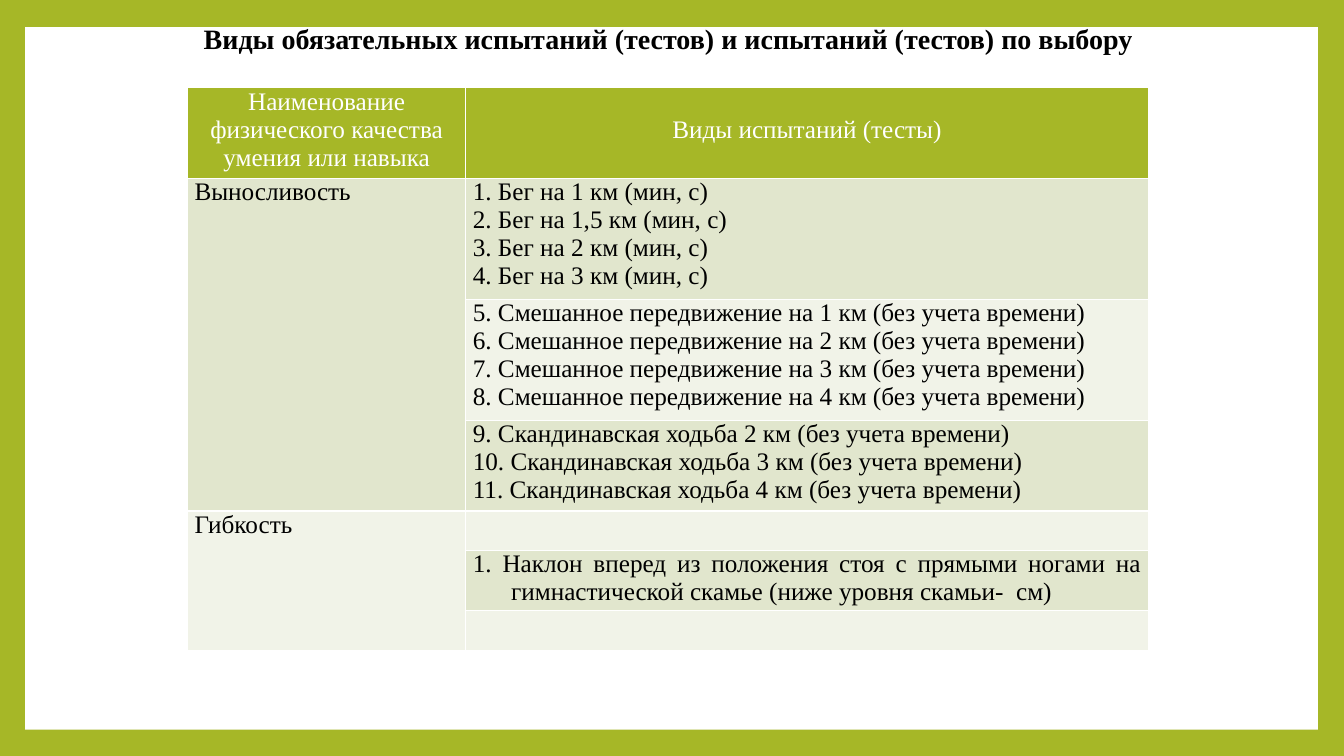
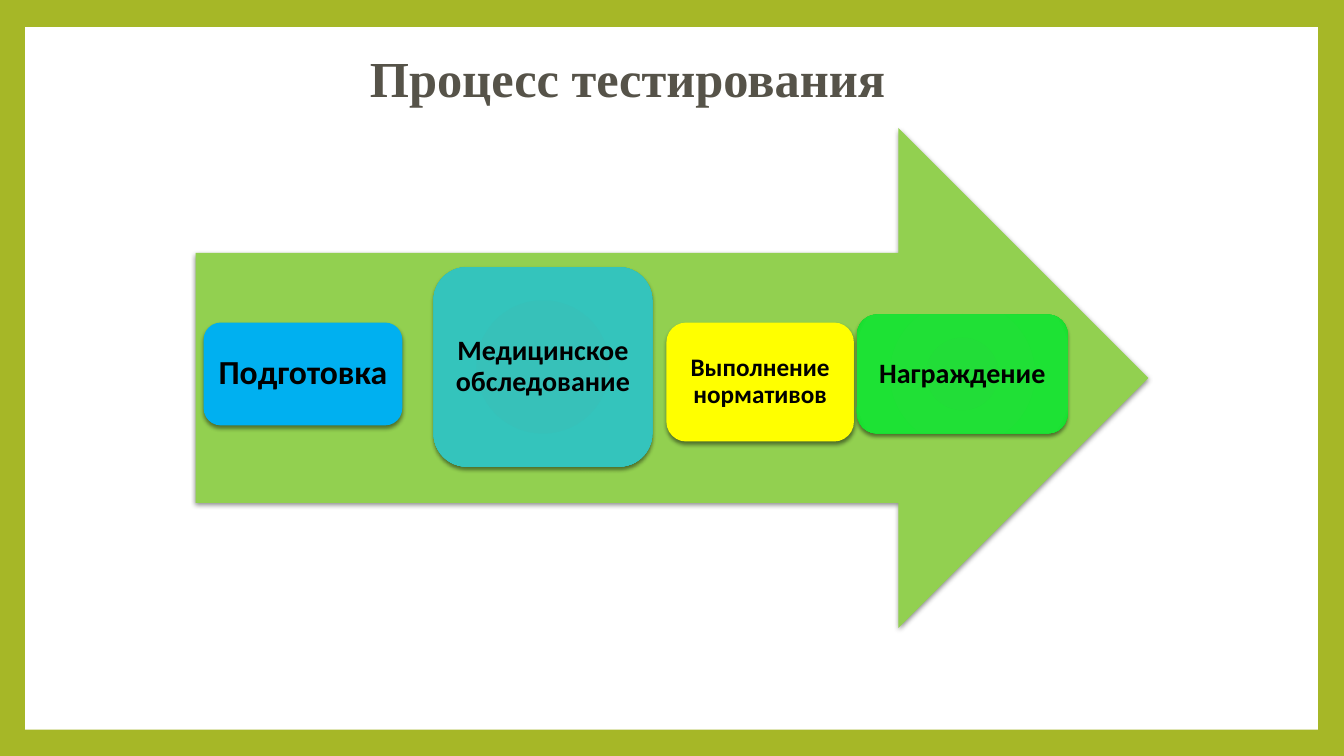
from lxml import etree
from pptx import Presentation
from pptx.dml.color import RGBColor
from pptx.enum.shapes import MSO_SHAPE
from pptx.enum.text import MSO_ANCHOR, MSO_AUTO_SIZE, PP_ALIGN
from pptx.oxml import parse_xml
from pptx.oxml.ns import nsdecls, qn
from pptx.util import Inches, Pt

CENTER, JUSTIFY = PP_ALIGN.CENTER, PP_ALIGN.JUSTIFY
MIDDLE, TOP = MSO_ANCHOR.MIDDLE, MSO_ANCHOR.TOP
NO_AUTOFIT = MSO_AUTO_SIZE.NONE
RECTANGLE, ROUNDED, ARROW = MSO_SHAPE.RECTANGLE, MSO_SHAPE.ROUNDED_RECTANGLE, MSO_SHAPE.RIGHT_ARROW

SERIF, SANS = "Times New Roman", "Calibri"
COLORS = {
    "frame": "A6B727", "panel": "FFFFFF", "ink": "000000", "title": "565349",
    "band_dark": "E1E6CD", "band_light": "F1F3E8", "arrow": "92D050",
    "blue": "00B0F0", "yellow": "FFFF00",
}
TEAL_GRADIENT = [(0, "37C1B9"), (90, "34C4BC"), (100, "25BCB3")]
GREEN_GRADIENT = [(0, "22DD38"), (90, "1DE234"), (100, "0EDA26")]

HEADERS = ["Наименование физического качества умения или навыка", "Виды испытаний (тесты)"]
QUALITIES = [
    ("Выносливость", [
        ["1. Бег на 1 км (мин, с)", "2. Бег на 1,5 км (мин, с)",
         "3. Бег на 2 км (мин, с)", "4. Бег на 3 км (мин, с)"],
        [f"{distance + 4}. Смешанное передвижение на {distance} км (без учета времени)"
         for distance in range(1, 5)],
        [f"{distance + 7}. Скандинавская ходьба {distance} км (без учета времени)"
         for distance in range(2, 5)],
    ]),
    ("Гибкость", [
        [],
        ["1. Наклон вперед из положения стоя с прямыми ногами на гимнастической "
         "скамье (ниже уровня скамьи-  см)"],
        [],
    ]),
]
COLUMN_WIDTHS = [2.76, 6.77]
ROW_HEIGHTS = [0.9, 1.2, 1.2, 0.9, 0.39, 0.6, 0.39]

STEPS = [
    ("Подготовка", 24, COLORS["blue"], (0.08, 1.93, 1.97, 1.02)),
    ("Медицинское обследование", 20, TEAL_GRADIENT, (2.36, 1.38, 2.17, 1.98)),
    ("Выполнение нормативов", 18, COLORS["yellow"], (4.67, 1.93, 1.86, 1.18)),
    ("Награждение", 20, GREEN_GRADIENT, (6.56, 1.85, 2.09, 1.18)),
]


def rgb(color):
    return RGBColor.from_string(color)


def add_run(paragraph, text, size, font, color, bold=False):
    run = paragraph.add_run()
    run.text = text
    run.font.size = Pt(size)
    run.font.name = font
    run.font.bold = bold
    run.font.color.rgb = rgb(color)


def apply_gradient(shape, stops):
    solid = shape.element.spPr.find(qn("a:solidFill"))
    gradient = parse_xml(
        f'<a:gradFill {nsdecls("a")} rotWithShape="1"><a:gsLst/>'
        '<a:path path="circle"><a:fillToRect l="100000" t="100000" r="100000" b="100000"/>'
        '</a:path></a:gradFill>')
    for position, color in stops:
        stop = etree.SubElement(gradient[0], qn("a:gs"), pos=str(position * 1000))
        etree.SubElement(stop, qn("a:srgbClr"), val=color)
    solid.getparent().replace(solid, gradient)


def apply_soft_shadow(shape):
    effects = shape.element.spPr.find(qn("a:effectLst"))
    shadow = etree.SubElement(effects, qn("a:outerShdw"), blurRad=str(Pt(3)),
                              dist=str(Pt(2)), dir="5400000", algn="ctr", rotWithShape="0")
    color = etree.SubElement(shadow, qn("a:srgbClr"), val=COLORS["ink"])
    etree.SubElement(color, qn("a:alpha"), val="45000")


def add_filled_shape(slide, kind, box, fill, shadow=False):
    shape = slide.shapes.add_shape(kind, *map(Inches, box))
    shape.shadow.inherit = False
    shape.line.fill.background()
    shape.fill.solid()
    if isinstance(fill, list):
        apply_gradient(shape, fill)
    else:
        shape.fill.fore_color.rgb = rgb(fill)
    if shadow:
        apply_soft_shadow(shape)
    return shape


def style_master(presentation, slide):
    master = presentation.slide_master
    master.background.fill.solid()
    master.background.fill.fore_color.rgb = rgb(COLORS["frame"])
    panel = add_filled_shape(slide, RECTANGLE, (0.25, 0.27, 12.82, 6.97), COLORS["panel"])
    panel.element.nvSpPr.cNvPr.set("id", "100")
    master.shapes.element.insert(2, panel.element)


def place_title(slide, box, text, size, color):
    title = slide.shapes.title
    title.left, title.top, title.width, title.height = map(Inches, box)
    frame = title.text_frame
    frame.auto_size = NO_AUTOFIT
    frame.word_wrap = True
    frame.vertical_anchor = MIDDLE
    paragraph = frame.paragraphs[0]
    paragraph.alignment = CENTER
    add_run(paragraph, text, size, SERIF, color, bold=True)


def style_cell(cell, fill):
    cell.margin_left = cell.margin_right = Inches(0.07)
    cell.margin_top = cell.margin_bottom = 0
    cell.vertical_anchor = TOP
    cell.fill.solid()
    cell.fill.fore_color.rgb = rgb(fill)
    properties = cell._tc.get_or_add_tcPr()
    for index, side in enumerate(("lnL", "lnR", "lnT", "lnB")):
        properties.insert(index, parse_xml(
            f'<a:{side} {nsdecls("a")} w="{Pt(1)}"><a:solidFill>'
            f'<a:srgbClr val="{COLORS["panel"]}"/></a:solidFill></a:{side}>'))


def fill_cell(cell, lines, color, alignment, hanging=0):
    frame = cell.text_frame
    for index, line in enumerate(lines):
        paragraph = frame.add_paragraph() if index else frame.paragraphs[0]
        paragraph.alignment = alignment
        if hanging:
            properties = paragraph._p.get_or_add_pPr()
            properties.set("marL", str(Inches(hanging)))
            properties.set("indent", str(-Inches(hanging)))
        add_run(paragraph, line, 18, SERIF, color)


def add_tests_table(slide, left, top):
    table = slide.shapes.add_table(
        len(ROW_HEIGHTS), len(COLUMN_WIDTHS), Inches(left), Inches(top),
        Inches(sum(COLUMN_WIDTHS)), Inches(sum(ROW_HEIGHTS))).table
    for column, width in zip(table.columns, COLUMN_WIDTHS):
        column.width = Inches(width)
    for row, height in zip(table.rows, ROW_HEIGHTS):
        row.height = Inches(height)

    bands = [COLORS["band_light"], COLORS["band_dark"]]
    for index, row in enumerate(table.rows):
        for cell in row.cells:
            style_cell(cell, bands[index % 2] if index else COLORS["frame"])
    for column, header in enumerate(HEADERS):
        fill_cell(table.cell(0, column), [header], COLORS["panel"], CENTER)
    table.cell(0, 1).margin_top = Inches(0.28)

    first = 1
    for quality, groups in QUALITIES:
        label = table.cell(first, 0)
        label.merge(table.cell(first + len(groups) - 1, 0))
        fill_cell(label, [quality], COLORS["ink"], JUSTIFY)
        for offset, tests in enumerate(groups):
            fill_cell(table.cell(first + offset, 1), tests, COLORS["ink"], JUSTIFY, hanging=0.38)
        first += len(groups)


def add_step(slide, box, text, size, fill):
    step = add_filled_shape(slide, ROUNDED, box, fill, shadow=True)
    frame = step.text_frame
    frame.word_wrap = True
    frame.vertical_anchor = MIDDLE
    frame.margin_left = frame.margin_right = Inches(0.06)
    frame.margin_top = frame.margin_bottom = Inches(0.06)
    paragraph = frame.paragraphs[0]
    paragraph.alignment = CENTER
    paragraph.line_spacing = 0.9
    add_run(paragraph, text, size, SANS, COLORS["ink"], bold=True)


def add_process(slide, left, top, width, height):
    add_filled_shape(slide, ARROW, (left, top, width, height), COLORS["arrow"], shadow=True)
    for text, size, fill, (x, y, step_width, step_height) in STEPS:
        add_step(slide, (left + x, top + y, step_width, step_height), text, size, fill)


def main():
    presentation = Presentation()
    presentation.slide_width = Inches(13.33)
    presentation.slide_height = Inches(7.5)
    title_only = presentation.slide_layouts[5]

    tests_slide = presentation.slides.add_slide(title_only)
    style_master(presentation, tests_slide)
    place_title(tests_slide, (1.63, 0.16, 10, 0.44),
                "Виды обязательных испытаний (тестов) и испытаний (тестов) по выбору",
                20, COLORS["ink"])
    add_tests_table(tests_slide, 1.86, 0.87)

    process_slide = presentation.slides.add_slide(title_only)
    place_title(process_slide, (1.42, 0.41, 9.61, 0.71), "Процесс тестирования",
                36, COLORS["title"])
    add_process(process_slide, 1.94, 1.27, 9.45, 4.96)

    presentation.save("out.pptx")


if __name__ == "__main__":
    main()
